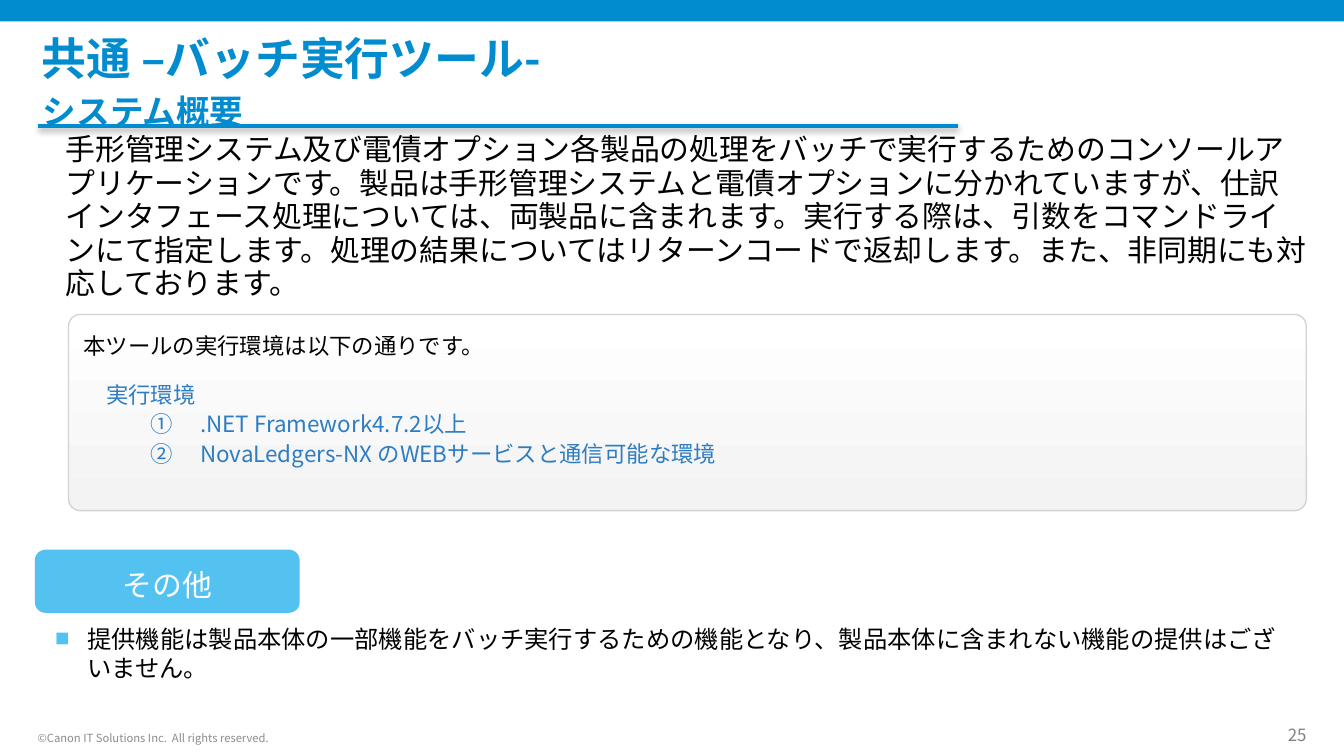
"""Build the batch tool overview slide."""
from lxml.etree import SubElement
from pptx import Presentation
from pptx.dml.color import RGBColor
from pptx.enum.shapes import MSO_CONNECTOR, MSO_SHAPE
from pptx.enum.text import MSO_ANCHOR, PP_ALIGN
from pptx.oxml import parse_xml
from pptx.oxml.ns import qn
from pptx.util import Inches, Pt

FONT = "Noto Sans CJK JP"
BLUE, SKY, LINK, BLACK = "008CCF", "54C2F0", "2E7DC2", "000000"
NS = "http://schemas.openxmlformats.org/drawingml/2006/main"


def color(code):
    """Turn a hex string into a colour."""
    return RGBColor.from_string(code)


def write(shape, lines, anchor=MSO_ANCHOR.TOP, inset=(0, 0, 0, 0)):
    """Fill a shape with (text, size, colour, formats) lines."""
    frame = shape.text_frame
    frame.word_wrap = True
    frame.vertical_anchor = anchor
    sides = ("margin_left", "margin_top", "margin_right", "margin_bottom")
    for side, gap in zip(sides, inset):
        setattr(frame, side, Inches(gap))
    for i, (text, size, code, formats) in enumerate(lines):
        para = frame.add_paragraph() if i else frame.paragraphs[0]
        for name, value in {"alignment": PP_ALIGN.LEFT, **formats}.items():
            if name != "bold":
                setattr(para, name, value)
        run = para.add_run()
        run.text = text
        font = run.font
        looks = {"name": FONT, "size": Pt(size), "bold": formats.get("bold", False)}
        for name, value in looks.items():
            setattr(font, name, value)
        font.color.rgb = color(code)
        SubElement(run._r.get_or_add_rPr(), qn("a:ea"), typeface=FONT)


deck = Presentation()
deck.slide_width, deck.slide_height = Inches(10), Inches(10 * 9 / 16)
slide = deck.slides.add_slide(deck.slide_layouts[5])
shapes = slide.shapes

band = shapes.add_shape(MSO_SHAPE.RECTANGLE, 0, 0, Inches(10), Inches(0.16))
panel = shapes.add_shape(
    MSO_SHAPE.ROUNDED_RECTANGLE, Inches(0.51), Inches(2.34), Inches(9.21), Inches(1.46))
label = shapes.add_shape(
    MSO_SHAPE.ROUNDED_RECTANGLE, Inches(0.26), Inches(4.09), Inches(1.97), Inches(0.47))
for shape, code in ((band, BLUE), (label, SKY)):
    shape.shadow.inherit = False
    shape.fill.solid()
    shape.fill.fore_color.rgb = color(code)
    shape.line.fill.background()

panel.shadow.inherit = False
panel.adjustments[0] = 0.06
panel.fill.gradient()
panel.fill.gradient_angle = 270
for stop, code in zip(panel.fill.gradient_stops, ("FFFFFF", "F3F3F3")):
    stop.color.rgb = color(code)
panel.line.color.rgb = color("D3D3D3")
panel.line.width = Pt(0.75)

rule = shapes.add_connector(
    MSO_CONNECTOR.STRAIGHT, Inches(0.28), Inches(0.94), Inches(7.13), Inches(0.94))
rule.line.color.rgb = color(BLUE)
rule.line.width = Pt(2)
rule._element.spPr.append(parse_xml(
    f'<a:effectLst xmlns:a="{NS}"><a:outerShdw blurRad="39370" dist="20320" '
    'dir="5400000" rotWithShape="0"><a:srgbClr val="000000">'
    '<a:alpha val="38000"/></a:srgbClr></a:outerShdw></a:effectLst>'))

title = shapes.title
for name, value in zip(("left", "top", "width", "height"), (0.31, 0.24, 7.87, 0.39)):
    setattr(title, name, Inches(value))
write(title, [("共通 –バッチ実行ツール-", 24, BLUE, {"bold": True, "line_spacing": Pt(28)})])
write(label, [("その他", 16, "FFFFFF", {"alignment": PP_ALIGN.CENTER})],
      MSO_ANCHOR.MIDDLE, (0.1, 0.05, 0.1, 0))

intro = (
    "手形管理システム及び電債オプション各製品の処理をバッチで実行するためのコンソールア"
    "プリケーションです。製品は手形管理システムと電債オプションに分かれていますが、仕訳"
    "インタフェース処理については、両製品に含まれます。実行する際は、引数をコマンドライ"
    "ンにて指定します。処理の結果についてはリターンコードで返却します。また、非同期にも対"
    "応しております。")
note = ("提供機能は製品本体の一部機能をバッチ実行するための機能となり、"
        "製品本体に含まれない機能の提供はございません。")
pitch = {"line_spacing": Pt(15.8)}
pad = (0.1, 0.05, 0.1, 0.05)
top, low = MSO_ANCHOR.TOP, MSO_ANCHOR.BOTTOM
texts = [
    ((0.22, 0.63, 6.69, 0.35), top, pad,
     [("システム概要", 18, BLUE, {"bold": True, "line_spacing": Pt(21.5)})]),
    ((0.39, 0.94, 9.45, 1.46), top, pad, [(intro, 16, BLACK, {"line_spacing": Pt(18)})]),
    ((0.62, 2.41, 7.95, 1.31), top, (0, 0.04, 0, 0), [
        ("本ツールの実行環境は以下の通りです。", 12, BLACK, pitch),
        ("実行環境", 12, LINK, {**pitch, "space_before": Pt(10.5)}),
        ("①\t.NET Framework4.7.2以上", 12, LINK, pitch),
        ("②\tNovaLedgers-NX のWEBサービスと通信可能な環境", 12, LINK, pitch)]),
    ((0.41, 4.64, 9.08, 0.66), top, (0, 0, 0, 0),
     [(note, 13, BLACK, {"alignment": PP_ALIGN.JUSTIFY, "line_spacing": Pt(15.8)})]),
    ((0.28, 5.39, 2.36, 0.15), low, (0, 0, 0, 0),
     [("©Canon IT Solutions Inc.  All rights reserved.", 6, "8C8C8C", {})]),
    ((9.33, 5.39, 0.39, 0.15), low, (0, 0, 0, 0),
     [("25", 9, "808080", {"alignment": PP_ALIGN.RIGHT})]),
]
boxes = []
for place, anchor, inset, lines in texts:
    box = shapes.add_textbox(*map(Inches, place))
    write(box, lines, anchor, inset)
    boxes.append(box)

env, item = boxes[2].text_frame.paragraphs, boxes[3].text_frame.paragraphs[0]
hangs = ((env[1], 0.17, 0), (env[2], 0.87, -0.37), (env[3], 0.87, -0.37), (item, 0.24, -0.24))
for para, left, hang in hangs:
    props = para._p.get_or_add_pPr()
    props.set("marL", str(Inches(left)))
    props.set("indent", str(Inches(hang)))
props = item._p.get_or_add_pPr()
SubElement(SubElement(props, qn("a:buClr")), qn("a:srgbClr"), val=SKY)
SubElement(props, qn("a:buSzPct"), val="60000")
SubElement(props, qn("a:buFont"), typeface=FONT)
SubElement(props, qn("a:buChar"), char="■")

deck.save("out.pptx")
